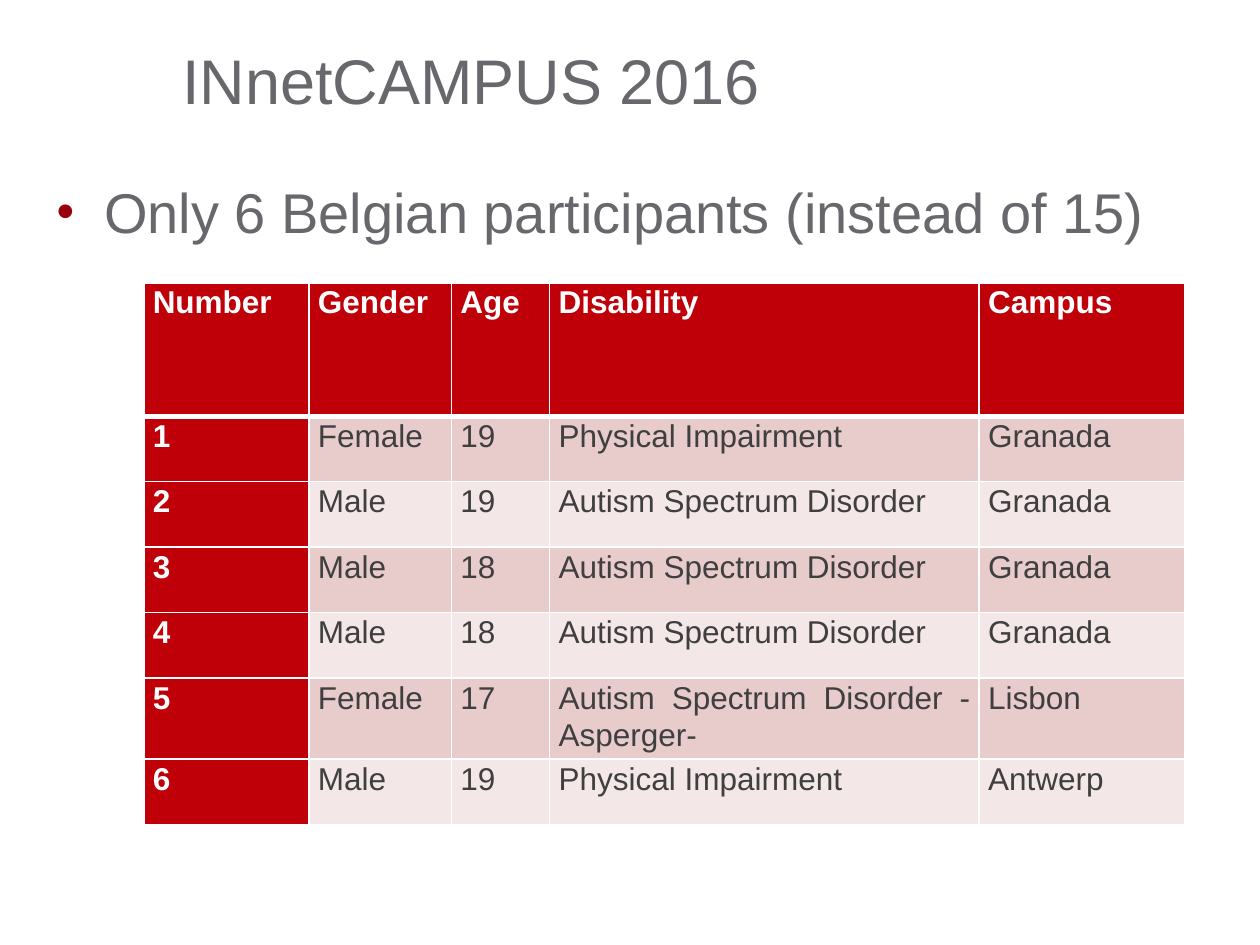
"""Build the INnetCAMPUS 2016 participants slide."""
from lxml import etree
from pptx import Presentation
from pptx.dml.color import RGBColor
from pptx.enum import text
from pptx.oxml import ns
from pptx.util import Cm, Pt

GREY = RGBColor(0x68, 0x67, 0x6C)
DARK = RGBColor(0x3F, 0x3F, 0x3F)
WHITE = RGBColor(0xFF, 0xFF, 0xFF)
BULLET_RED = RGBColor(0x97, 0x00, 0x0C)
RED = RGBColor(0xBF, 0x00, 0x09)
BANDS = (RGBColor(0xF4, 0xE7, 0xE7), RGBColor(0xE8, 0xCC, 0xCC))

COL_WIDTHS = (3.33, 2.87, 1.98, 8.66, 4.14)
HEADER_HEIGHT, ROW_HEIGHT = 2.69, 1.32
ROWS = (
    ("Number", "Gender", "Age", "Disability", "Campus"),
    ("1", "Female", "19", "Physical Impairment", "Granada"),
    ("2", "Male", "19", "Autism Spectrum Disorder", "Granada"),
    ("3", "Male", "18", "Autism Spectrum Disorder", "Granada"),
    ("4", "Male", "18", "Autism Spectrum Disorder", "Granada"),
    ("5", "Female", "17", "Autism Spectrum Disorder - Asperger-", "Lisbon"),
    ("6", "Male", "19", "Physical Impairment", "Antwerp"),
)


def add_child(parent, tag, **attrs):
    """Append a DrawingML element and return it."""
    return etree.SubElement(parent, ns.qn(tag), {k: str(v) for k, v in attrs.items()})


def style_runs(p, size, color, bold=False):
    """Format every run of a paragraph."""
    for r in p.runs:
        r.font.name = "Arial"
        r.font.size = Pt(size)
        r.font.bold = bold
        r.font.color.rgb = color


def add_text(s, box, content, size):
    """Add a wrapped grey text box and return its frame."""
    tf = s.shapes.add_textbox(*(Cm(v) for v in box)).text_frame
    tf.word_wrap = True
    tf.text = content
    style_runs(tf.paragraphs[0], size, GREY)
    return tf


def add_title(s, content):
    """Add the title, moved in by one tab stop."""
    tf = add_text(s, (0.89, 0, 24.2, 3.18), "\t" + content, 36)
    tf.vertical_anchor = text.MSO_ANCHOR.MIDDLE
    tabs = add_child(tf.paragraphs[0]._p.get_or_add_pPr(), "a:tabLst")
    add_child(tabs, "a:tab", pos=Cm(2.54), algn="l")


def add_bullet(s, content):
    """Add the bulleted statement."""
    tf = add_text(s, (0.89, 3.33, 23.6, 13.2), content, 32)
    tf.margin_top = Cm(0.25)
    pPr = tf.paragraphs[0]._p.get_or_add_pPr()
    pPr.set("marL", str(Cm(0.96)))
    pPr.set("indent", str(Cm(-0.96)))
    add_child(add_child(pPr, "a:buClr"), "a:srgbClr", val=BULLET_RED)
    add_child(pPr, "a:buSzPct", val=90000)
    add_child(pPr, "a:buFont", typeface="Arial")
    add_child(pPr, "a:buChar", char="•")


def set_borders(cell, **widths):
    """Draw white cell borders, 1 pt unless a side is given a width."""
    tcPr = cell._tc.get_or_add_tcPr()
    for side in "LRTB":
        ln = add_child(tcPr, f"a:ln{side}", w=Pt(widths.get(side, 1)))
        add_child(add_child(ln, "a:solidFill"), "a:srgbClr", val=WHITE)


def fill_cell(cell, content, row, col):
    """Write and format one table cell."""
    strong = row == 0 or col == 0
    set_borders(cell, **{0: {"B": 3}, 1: {"T": 3}}.get(row, {}))
    cell.fill.solid()
    cell.fill.fore_color.rgb = RED if strong else BANDS[row % 2]
    cell.margin_left = cell.margin_right = Cm(0.18)
    cell.margin_top = cell.margin_bottom = 0
    p = cell.text_frame.paragraphs[0]
    p.text = content
    p.alignment = text.PP_ALIGN.JUSTIFY
    p.line_spacing = 1.07
    p.space_after = Pt(8)
    style_runs(p, 18, WHITE if strong else DARK, strong)


def add_participants(s):
    """Add the table of participants."""
    height = HEADER_HEIGHT + ROW_HEIGHT * (len(ROWS) - 1)
    table = s.shapes.add_table(len(ROWS), len(COL_WIDTHS), Cm(2.9), Cm(5.7),
                               Cm(sum(COL_WIDTHS)), Cm(height)).table
    table.first_col = True
    for column, width in zip(table.columns, COL_WIDTHS):
        column.width = Cm(width)
    for i, values in enumerate(ROWS):
        table.rows[i].height = Cm(ROW_HEIGHT if i else HEADER_HEIGHT)
        for j, value in enumerate(values):
            fill_cell(table.cell(i, j), value, i, j)


def main():
    """Build and save the slide."""
    prs = Presentation()
    prs.slide_width, prs.slide_height = Cm(25.4), Cm(19.05)
    s = prs.slides.add_slide(prs.slide_layouts[6])
    add_title(s, "INnetCAMPUS 2016")
    add_bullet(s, "Only 6 Belgian participants (instead of 15)")
    add_participants(s)
    prs.save("out.pptx")


if __name__ == "__main__":
    main()
